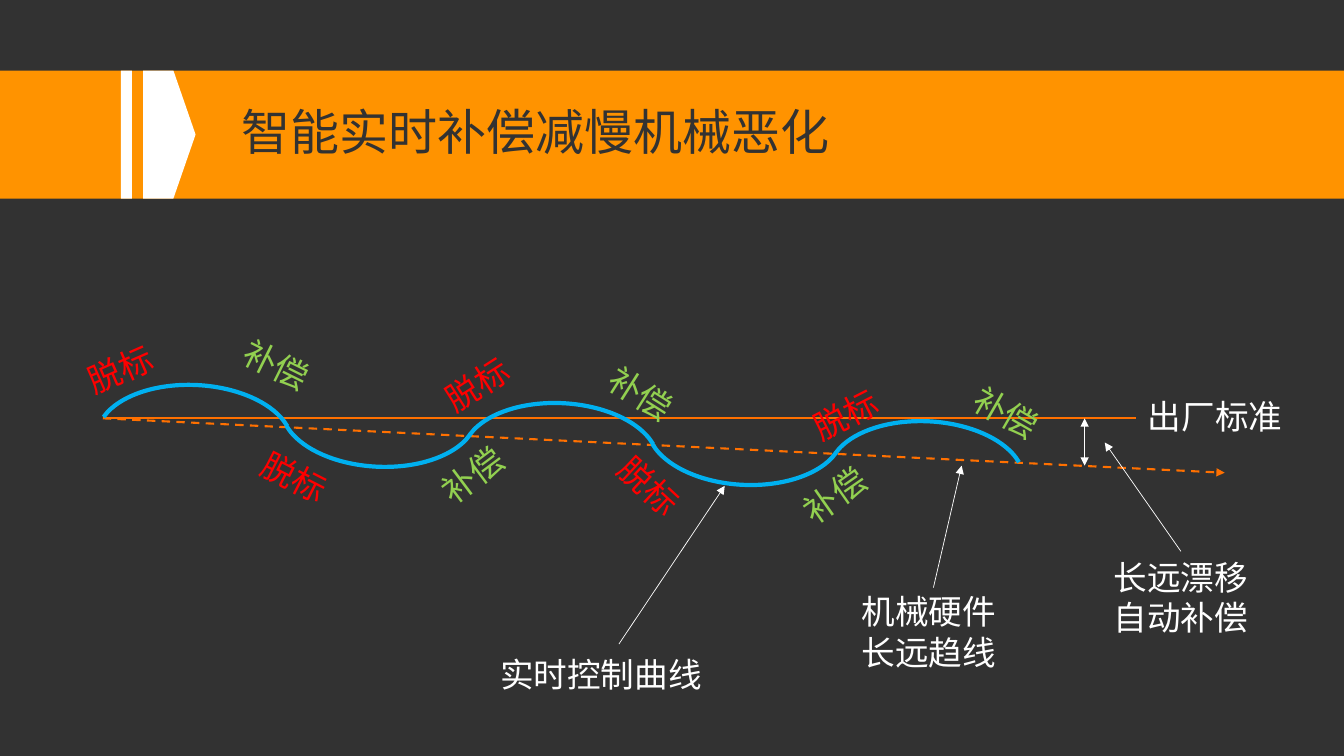
import pptx
import pptx.util
import pptx.dml.color
import pptx.enum.dml
import pptx.enum.shapes
import pptx.enum.text
from lxml import etree

# Grid: 133.33 columns by 75 rows of square cells
CELL = 0.1
COLS, ROWS = 133.33, 75

THEME = {
    "font": "Arial", "dark": "323232", "band": "FF9300", "white": "FFFFFF",
    "trend": "FF7000", "wave": "00B0F0", "drift": "FF0000", "fix": "92D050",
    "title": 35, "body": 24, "thin": 0.5, "line": 1.5, "thick": 3,
}

TITLE = "智能实时补偿减慢机械恶化"
DRIFT, FIX = "脱标", "补偿"

# Wave tags: text, colour, column, row, turn in degrees
TAGS = [
    (DRIFT, "drift", 24.8, 44.8, 27), (FIX, "fix", 23, 33.7, 26.4),
    (DRIFT, "drift", 7.5, 34.1, 336.4), (FIX, "fix", 42.5, 44.6, 323.1),
    (DRIFT, "drift", 42.9, 35.6, 327.5), (FIX, "fix", 78.4, 46.6, 325),
    (DRIFT, "drift", 60, 45.7, 42.8), (FIX, "fix", 59.2, 36.5, 32.4),
    (DRIFT, "drift", 79.5, 38.6, 333), (FIX, "fix", 95.4, 38.4, 30),
]

# Notes: text, column, row
NOTES = [
    ("出厂标准", 112.8, 38.8),
    ("实时控制曲线", 48.5, 64.4),
    ("机械硬件\n长远趋线", 84.4, 58.1),
    ("长远漂移\n自动补偿", 109.4, 54.7),
]

# Lines: start, end, colour, width, dashed, arrow ends
BASE = 41.5
LINES = [
    ((10.2, BASE), (121.5, 46.9), "trend", "line", True, ["tailEnd"]),
    ((10.2, BASE), (112.7, BASE), "trend", "line", False, []),
    ((61.4, 63.9), (71.9, 48.2), "white", "thin", False, ["tailEnd"]),
    ((92.6, 58.3), (95.4, 46.2), "white", "thin", False, ["tailEnd"]),
    ((107.6, BASE), (107.6, 46.2), "white", "thin", False, ["headEnd", "tailEnd"]),
]
POINTER = ((117.2, 54.7), (109.6, 43.9), "white", "thin", False, ["tailEnd"])

# Wave: arcs alternate hill and valley, each pair one period further on
ARCS = 5
ARC_W, ARC_H, TILT = 19.4, 11, 2.9
PERIOD, DROP = 36.3, 1.8
HILL, VALLEY = (9.6, 38.2), (27.9, 35.3)
SWEEP = (114.903, 208.922)

BAND_TOP, BAND_H = 7, 12.7
STRIPE = (12, 1.1)
FLAG = [(14.2, 0), (17.2, 0), (19.4, 0.5), (17.2, 1), (14.2, 1)]


def grid(n):
    return pptx.util.Inches(n * CELL)


def tint(name):
    return pptx.dml.color.RGBColor.from_string(THEME[name])


def paint(shape, name):
    shape.shadow.inherit = False
    shape.fill.solid()
    shape.fill.fore_color.rgb = tint(name)
    shape.line.fill.background()


def write(slide, text, x, y, w, h, color="white", size="body", turn=0,
          center=True, wrap=False, space=None):
    box = slide.shapes.add_textbox(grid(x), grid(y), grid(w), grid(h))
    box.rotation = turn
    frame = box.text_frame
    frame.word_wrap = wrap
    frame.vertical_anchor = pptx.enum.text.MSO_ANCHOR.MIDDLE
    align = pptx.enum.text.PP_ALIGN
    for i, line in enumerate(text.split("\n")):
        para = frame.paragraphs[0] if i == 0 else frame.add_paragraph()
        para.alignment = align.CENTER if center else align.LEFT
        para.line_spacing = space
        run = para.add_run()
        run.text = line
        run.font.name = THEME["font"]
        run.font.size = pptx.util.Pt(THEME[size])
        run.font.color.rgb = tint(color)
    return box


def label(slide, text, x, y, **form):
    """Write text in a box sized by its line count and longest line."""
    rows = text.split("\n")
    wide = 2.1 + 3.35 * max(map(len, rows))
    return write(slide, text, x, y, wide, 5 + 4.1 * (len(rows) - 1), **form)


def draw(slide, start, end, color, width, dash, ends):
    link = slide.shapes.add_connector(
        pptx.enum.shapes.MSO_CONNECTOR.STRAIGHT, *map(grid, start + end))
    link.line.color.rgb = tint(color)
    link.line.width = pptx.util.Pt(THEME[width])
    if dash:
        link.line.dash_style = pptx.enum.dml.MSO_LINE.DASH
    props = link.line._get_or_add_ln()
    for tip in ends:
        etree.SubElement(props, pptx.oxml.ns.qn("a:" + tip), type="triangle")
    etree.SubElement(link._element.spPr, pptx.oxml.ns.qn("a:effectLst"))
    return link


def add_band(slide):
    for x, w, color in [(0, COLS, "band"), (*STRIPE, "white")]:
        bar = slide.shapes.add_shape(
            pptx.enum.shapes.MSO_SHAPE.RECTANGLE,
            grid(x), grid(BAND_TOP), grid(w), grid(BAND_H))
        paint(bar, color)
    spots = [(grid(x), grid(BAND_TOP + share * BAND_H)) for x, share in FLAG]
    path = slide.shapes.build_freeform(*spots[0])
    path.add_line_segments(spots[1:], close=True)
    paint(path.convert_to_shape(), "white")
    write(slide, TITLE, 23, BAND_TOP, 101.2, BAND_H, color="dark", size="title",
          center=False, wrap=True, space=0.9)


def add_wave(slide):
    for i in range(ARCS):
        pair, low = divmod(i, 2)
        x, y = VALLEY if low else HILL
        arc = slide.shapes.add_shape(
            pptx.enum.shapes.MSO_SHAPE.ARC, grid(x + pair * PERIOD),
            grid(y + pair * DROP), grid(ARC_W), grid(ARC_H))
        arc.adjustments[0], arc.adjustments[1] = SWEEP
        arc.rotation = TILT + 180 * low
        arc.shadow.inherit = False
        arc.fill.background()
        arc.line.color.rgb = tint("wave")
        arc.line.width = pptx.util.Pt(THEME["thick"])


def main():
    deck = pptx.Presentation()
    deck.slide_width, deck.slide_height = grid(COLS), grid(ROWS)
    slide = deck.slides.add_slide(deck.slide_layouts[6])
    slide.background.fill.solid()
    slide.background.fill.fore_color.rgb = tint("dark")
    add_band(slide)
    for line in LINES:
        draw(slide, *line)
    add_wave(slide)
    for text, color, x, y, turn in TAGS:
        label(slide, text, x, y, color=color, turn=turn)
    boxes = [label(slide, *note) for note in NOTES]
    draw(slide, *POINTER).begin_connect(boxes[-1], 0)
    deck.save("out.pptx")


if __name__ == "__main__":
    main()
